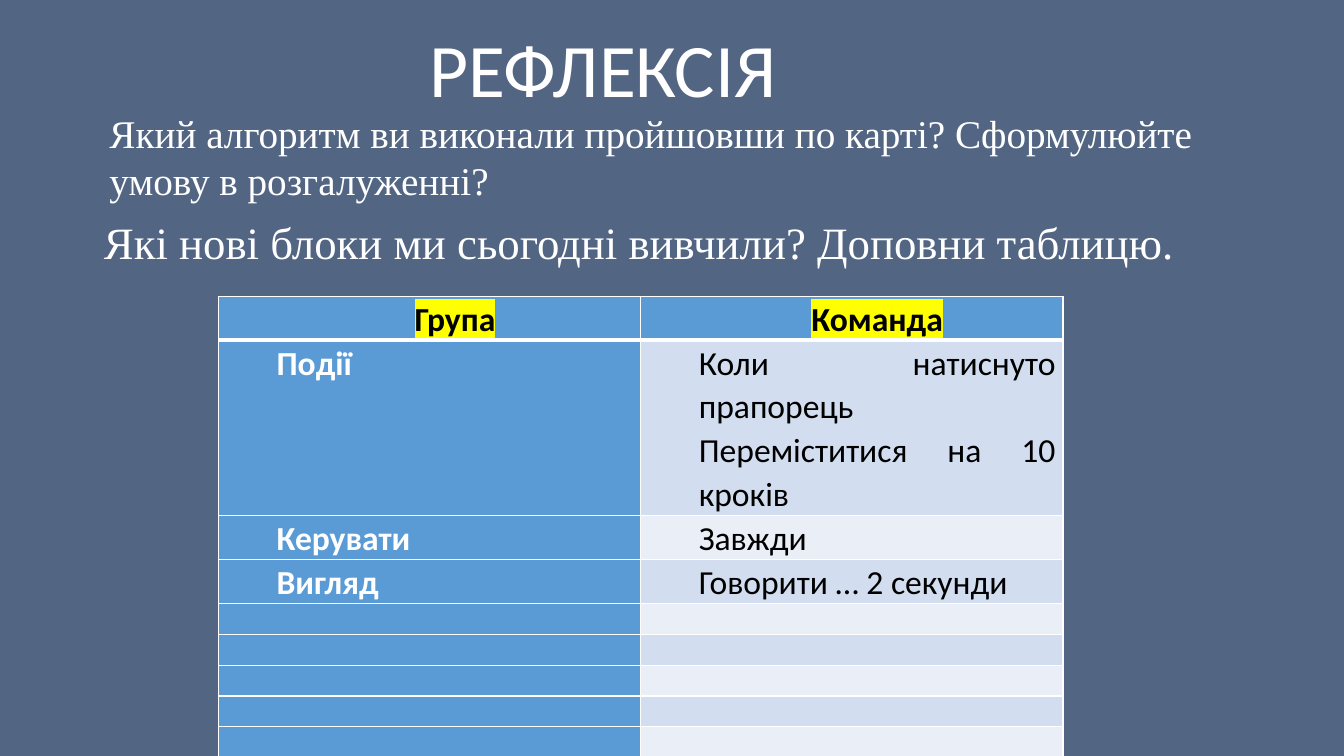
"""Builds the reflection slide: two questions and a table of blocks to complete."""
from lxml import etree
from pptx import Presentation
from pptx import util as u
from pptx.dml.color import RGBColor
from pptx.enum import text
from pptx.oxml.ns import qn

COLORS = {"back": "526582", "white": "FFFFFF", "black": "000000", "mark": "FFFF00",
          "group": "5B9BD5", "odd": "D2DEEF", "even": "EAEFF7"}
HEADING = "РЕФЛЕКСІЯ"
QUESTIONS = [
    ("Який алгоритм ви виконали пройшовши по карті? Сформулюйте умову в розгалуженні?",
     28, (2.51, 2.62, 28.5, 2.64)),
    ("Які нові блоки ми сьогодні вивчили? Доповни таблицю.",
     32, (2.37, 5.28, 27.89, 1.63)),
]
HEADERS = ["Група", "Команда"]
BLOCKS = [
    ("Події", ["Коли натиснуто прапорець", "Переміститися на 10 кроків"]),
    ("Керувати", ["Завжди"]),
    ("Вигляд", ["Говорити … 2 секунди"]),
]
EMPTY_ROWS = 5
TABLE_LEFT, TABLE_TOP, COLUMN_WIDTH, ROW_HEIGHT = 5.51, 7.47, 10.64, 0.76


def rgb(name):
    return RGBColor.from_string(COLORS[name])


def write(frame, lines, size=24, font="Calibri", color="white", bold=False,
          align=text.PP_ALIGN.LEFT, spacing=1.0, indent=0, highlight=None):
    """Fill a text frame with one paragraph per line."""
    for number, line in enumerate(lines):
        paragraph = frame.paragraphs[0] if number == 0 else frame.add_paragraph()
        paragraph.alignment = align
        paragraph.line_spacing = spacing
        if indent:
            properties = paragraph._p.get_or_add_pPr()
            properties.set("marL", str(u.Cm(indent)))
            properties.set("indent", "0")
        run = paragraph.add_run()
        run.text = line
        run.font.size = u.Pt(size)
        run.font.bold = bold
        run.font.color.rgb = rgb(color)
        if highlight:
            mark = etree.SubElement(run.font._element, qn("a:highlight"))
            etree.SubElement(mark, qn("a:srgbClr"), val=COLORS[highlight])
        run.font.name = font


def style_cell(cell, fill, bottom=1):
    """Set the margins, white borders and fill of a cell."""
    cell.margin_left = cell.margin_right = u.Cm(0.19)
    cell.margin_top = cell.margin_bottom = 0
    properties = cell._tc.get_or_add_tcPr()
    for side, width in (("L", 1), ("R", 1), ("T", 1), ("B", bottom)):
        border = etree.SubElement(properties, qn("a:ln" + side), w=str(u.Pt(width)))
        solid = etree.SubElement(border, qn("a:solidFill"))
        etree.SubElement(solid, qn("a:srgbClr"), val=COLORS["white"])
    cell.fill.solid()
    cell.fill.fore_color.rgb = rgb(fill)


def place(shape, box):
    shape.left, shape.top, shape.width, shape.height = [u.Cm(length) for length in box]


def add_blocks(slide):
    row_count = 1 + len(BLOCKS) + EMPTY_ROWS
    blocks = slide.shapes.add_table(
        row_count, 2, u.Cm(TABLE_LEFT), u.Cm(TABLE_TOP),
        u.Cm(2 * COLUMN_WIDTH), u.Cm(row_count * ROW_HEIGHT)).table
    for column in blocks.columns:
        column.width = u.Cm(COLUMN_WIDTH)
    for index, row in enumerate(blocks.rows):
        row.height = u.Cm(ROW_HEIGHT)
        command_fill = "group" if index == 0 else "odd" if index % 2 else "even"
        bottom = 3 if index == 0 else 1
        for cell, fill in zip(row.cells, ("group", command_fill)):
            style_cell(cell, fill, bottom)
    for column, header in enumerate(HEADERS):
        write(blocks.cell(0, column).text_frame, [header], color="black", bold=True,
              align=text.PP_ALIGN.CENTER, spacing=1.07, indent=1.27, highlight="mark")
    body = dict(align=text.PP_ALIGN.JUSTIFY, spacing=1.07, indent=1.27)
    for index, (group, commands) in enumerate(BLOCKS, 1):
        write(blocks.cell(index, 0).text_frame, [group], bold=True, **body)
        write(blocks.cell(index, 1).text_frame, commands, color="black", **body)


def main():
    deck = Presentation()
    deck.slide_width, deck.slide_height = u.Cm(33.87), u.Cm(19.05)
    slide = deck.slides.add_slide(deck.slide_layouts[5])
    slide.background.fill.solid()
    slide.background.fill.fore_color.rgb = rgb("back")

    heading = slide.shapes.title
    place(heading, (10.52, 0.43, 9.35, 2.57))
    heading.text_frame.auto_size = text.MSO_AUTO_SIZE.NONE
    heading.text_frame.word_wrap = False
    heading.text_frame.vertical_anchor = text.MSO_ANCHOR.TOP
    write(heading.text_frame, [HEADING], size=54, align=text.PP_ALIGN.CENTER)

    add_blocks(slide)
    for question, size, box in QUESTIONS:
        prompt = slide.shapes.add_textbox(0, 0, 0, 0)
        place(prompt, box)
        prompt.text_frame.word_wrap = True
        write(prompt.text_frame, [question], size=size, font="Times New Roman")
    deck.save("out.pptx")


if __name__ == "__main__":
    main()
